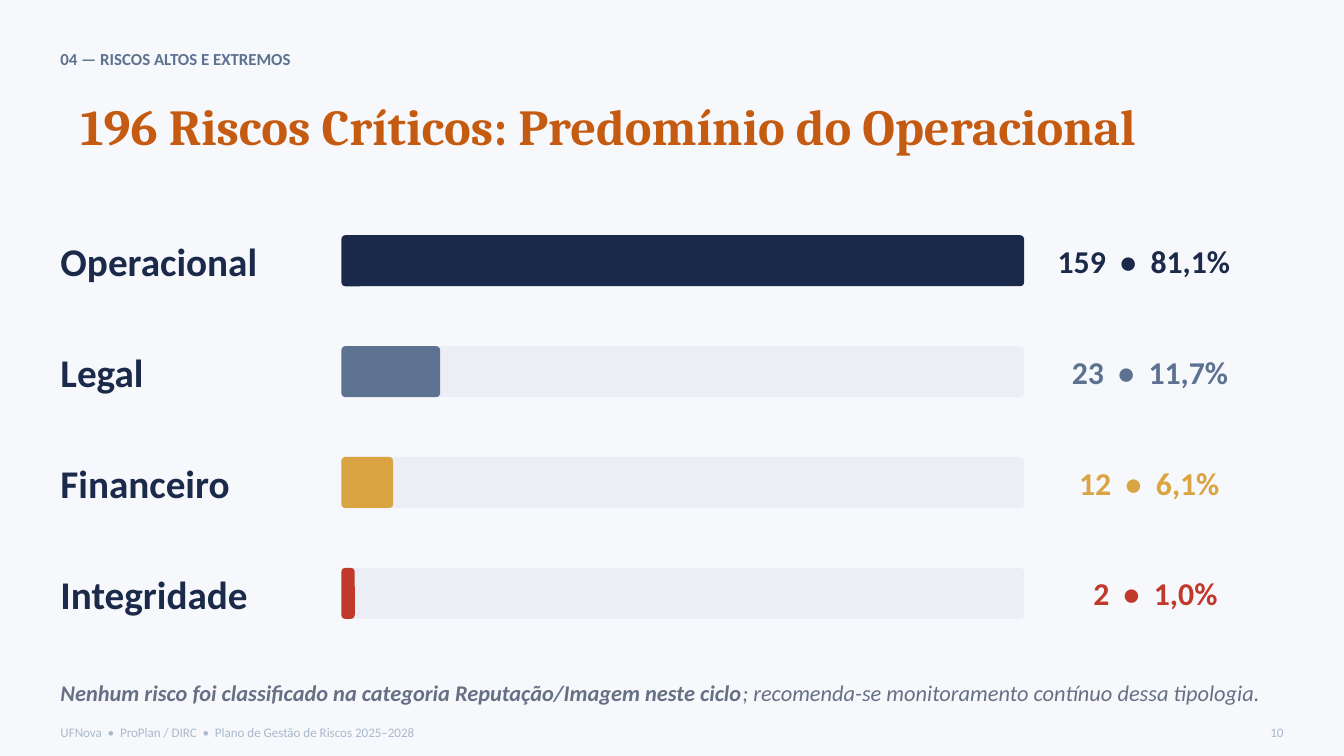
from pptx import Presentation
from pptx import util as u
from pptx.dml import color
from pptx.enum import shapes, text

PX = u.Inches(1) // 200
COLORS = {
    "paper": "F6F8FB",
    "navy": "1B2A4A",
    "slate": "5D7290",
    "gold": "D9A441",
    "red": "C0392B",
    "orange": "C55A11",
    "track": "EBEEF4",
    "note": "667085",
    "footer": "AAB9CC",
}
FORMATS = {
    "section": {"size": u.Pt(9), "bold": True},
    "title": {"size": u.Pt(27), "bold": True, "name": "Cambria"},
    "label": {"size": u.Pt(21), "bold": True},
    "value": {"size": u.Pt(17), "bold": True},
    "finding": {"size": u.Pt(12), "bold": True, "italic": True},
    "advice": {"size": u.Pt(12), "bold": False, "italic": True},
    "footer": {"size": u.Pt(7), "bold": False},
}
RISKS = [
    ("Operacional", 159, "navy", 0),
    ("Legal", 23, "slate", 21),
    ("Financeiro", 12, "gold", 32),
    ("Integridade", 2, "red", 53),
]
LEFT = 90
ROW_TOP, ROW_HEIGHT, ROW_STEP = 322, 132, 165
BAR_LEFT, BAR_WIDTH, BAR_HEIGHT, BAR_MIN = 508, 1016, 76, 20
BAR_RADIUS = 6
VALUE_LEFT = 1574


class Painter:
    def __init__(self, page):
        self.page = page

    def rgb(self, name):
        return color.RGBColor.from_string(COLORS[name])

    def background(self, tint):
        fill = self.page.background.fill
        fill.solid()
        fill.fore_color.rgb = self.rgb(tint)

    def fill_text(self, box, spans, align=text.PP_ALIGN.LEFT, indent=0):
        frame = box.text_frame
        layout = {
            "word_wrap": True,
            "auto_size": text.MSO_AUTO_SIZE.NONE,
            "vertical_anchor": text.MSO_ANCHOR.MIDDLE,
            "margin_left": indent * PX,
            "margin_top": 0,
            "margin_right": 0,
            "margin_bottom": 0,
        }
        for key, value in layout.items():
            setattr(frame, key, value)
        para = frame.paragraphs[0]
        para.alignment = align
        for words, style, tint in spans:
            span = para.add_run()
            span.text = words
            for key, value in ({"name": "Calibri"} | FORMATS[style]).items():
                setattr(span.font, key, value)
            span.font.color.rgb = self.rgb(tint)

    def title(self, area, words, tint):
        box = self.page.shapes.title
        for key, value in zip(("left", "top", "width", "height"), area):
            setattr(box, key, value * PX)
        self.fill_text(box, [(words, "title", tint)])

    def label(self, area, spans, **options):
        box = self.page.shapes.add_textbox(*(value * PX for value in area))
        self.fill_text(box, spans, **options)

    def bar(self, top, width, tint):
        box = self.page.shapes.add_shape(
            shapes.MSO_SHAPE.ROUNDED_RECTANGLE,
            *(value * PX for value in (BAR_LEFT, top, width, BAR_HEIGHT)),
        )
        box.adjustments[0] = BAR_RADIUS / min(width, BAR_HEIGHT)
        box.shadow.inherit = False
        box.fill.solid()
        box.fill.fore_color.rgb = self.rgb(tint)
        box.line.fill.background()


def draw_risks(painter):
    total = sum(count for _, count, _, _ in RISKS)
    largest = max(count for _, count, _, _ in RISKS)
    for row, (name, count, tint, indent) in enumerate(RISKS):
        top = ROW_TOP + row * ROW_STEP
        bar_top = top + (ROW_HEIGHT - BAR_HEIGHT) // 2
        width = max(BAR_MIN, round(BAR_WIDTH * count / largest))
        share = f"{count / total:.1%}".replace(".", ",")
        painter.label((LEFT, top, 390, ROW_HEIGHT), [(name, "label", "navy")])
        if width < BAR_WIDTH:
            painter.bar(bar_top, BAR_WIDTH, "track")
        painter.bar(bar_top, width, tint)
        painter.label(
            (VALUE_LEFT, top, 360, ROW_HEIGHT),
            [(f"{count}  •  {share}", "value", tint)],
            indent=indent,
        )


def main():
    deck = Presentation()
    deck.slide_width, deck.slide_height = 2000 * PX, 1125 * PX
    page = deck.slides.add_slide(deck.slide_layouts[5])
    painter = Painter(page)
    painter.background("paper")
    painter.label((LEFT, 64, 1200, 48), [("04 — RISCOS ALTOS E EXTREMOS", "section", "slate")])
    painter.title((120, 130, 1700, 112), "196 Riscos Críticos: Predomínio do Operacional", "orange")
    draw_risks(painter)
    painter.label((LEFT, 1000, 1820, 60), [
        ("Nenhum risco foi classificado na categoria Reputação/Imagem neste ciclo", "finding", "note"),
        ("; recomenda-se monitoramento contínuo dessa tipologia.", "advice", "note"),
    ])
    painter.label((LEFT, 1068, 1350, 42), [
        ("UFNova  •  ProPlan / DIRC  •  Plano de Gestão de Riscos 2025–2028", "footer", "footer"),
    ])
    painter.label((1834, 1068, 76, 42), [("10", "footer", "footer")], align=text.PP_ALIGN.RIGHT)
    deck.save("out.pptx")


if __name__ == "__main__":
    main()
